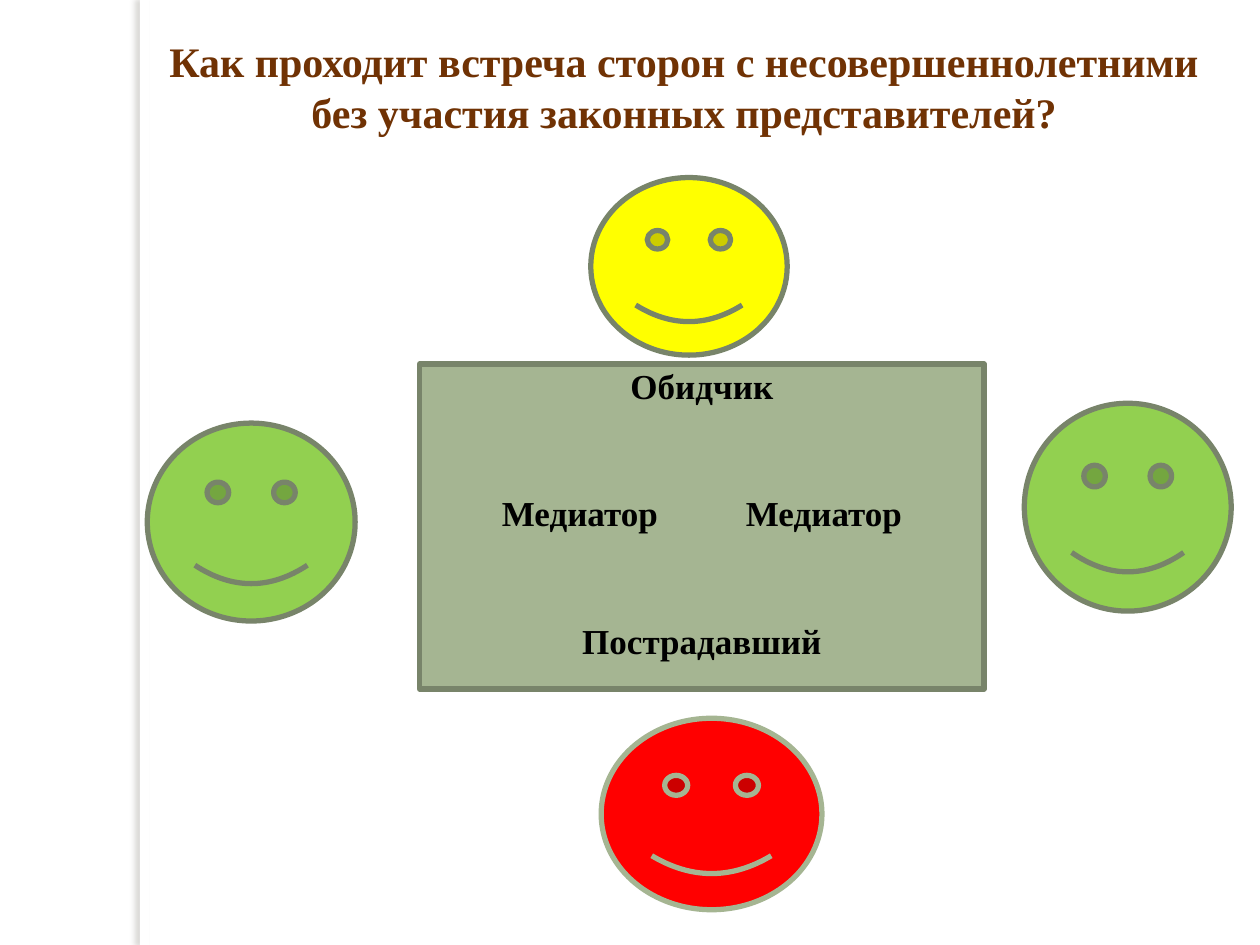
import pptx
import pptx.dml.color
import pptx.enum.shapes
import pptx.enum.text
import pptx.oxml
import pptx.oxml.ns
import pptx.util

Cm = pptx.util.Cm
Pt = pptx.util.Pt
RGBColor = pptx.dml.color.RGBColor
Shapes = pptx.enum.shapes.MSO_SHAPE
Align = pptx.enum.text.PP_ALIGN
Anchor = pptx.enum.text.MSO_ANCHOR

FONT = "Times New Roman"
WHITE = RGBColor(0xFF, 0xFF, 0xFF)
BLACK = RGBColor(0, 0, 0)
BROWN = RGBColor(0x70, 0x32, 0x04)
SAGE = RGBColor(0xA5, 0xB5, 0x92)
DARK_SAGE = RGBColor(0x78, 0x84, 0x6A)
GREEN = RGBColor(0x92, 0xD0, 0x50)
YELLOW = RGBColor(0xFF, 0xFF, 0)
RED = RGBColor(0xFF, 0, 0)

TITLE = ("Как проходит встреча сторон с несовершеннолетними "
         "без участия законных представителей?")
SEATS = ["Обидчик", "\tМедиатор\tМедиатор", "Пострадавший"]

# Boxes are left, top, width, height in centimetres
EDGE_BOX = (2.82, 0, 0.2, 19.05)
TITLE_BOX = (2.97, 0.58, 21.64, 2.31)
TABLE_BOX = (8.46, 7.34, 11.38, 6.55)
FACES = [
    ((2.97, 8.53, 4.19, 3.99), GREEN, DARK_SAGE),
    ((20.65, 8.13, 4.17, 4.19), GREEN, DARK_SAGE),
    ((11.91, 3.58, 3.96, 3.58), YELLOW, DARK_SAGE),
    ((12.12, 14.48, 4.45, 3.86), RED, SAGE),
]


def add_filled_shape(slide, kind, box, fill, line=None):
    shape = slide.shapes.add_shape(kind, *map(Cm, box))
    shape.shadow.inherit = False
    shape.fill.solid()
    shape.fill.fore_color.rgb = fill
    if line is None:
        shape.line.fill.background()
    else:
        shape.line.color.rgb = line
        shape.line.width = Pt(3)
    return shape


def format_paragraph(paragraph, size, color):
    paragraph.alignment = Align.CENTER
    paragraph.font.name = FONT
    paragraph.font.size = Pt(size)
    paragraph.font.bold = True
    paragraph.font.color.rgb = color


def add_center_tabs(paragraph, positions):
    """Make the paragraph left-aligned with centred tab stops."""
    paragraph.alignment = Align.LEFT
    stops = "".join(f'<a:tab pos="{Cm(position)}" algn="ctr"/>' for position in positions)
    tabs = pptx.oxml.parse_xml(
        f'<a:tabLst {pptx.oxml.ns.nsdecls("a")}>{stops}</a:tabLst>')
    properties = paragraph._p.get_or_add_pPr()
    properties.find(pptx.oxml.ns.qn("a:defRPr")).addprevious(tabs)


def add_edge(slide, box):
    edge = add_filled_shape(slide, Shapes.RECTANGLE, box, WHITE)
    # Soft shadow falling to the left
    effects = edge._element.spPr.find(pptx.oxml.ns.qn("a:effectLst"))
    effects.append(pptx.oxml.parse_xml(
        f'<a:outerShdw {pptx.oxml.ns.nsdecls("a")} blurRad="{Pt(3)}" dist="{Pt(3)}" '
        'dir="10800000" algn="tl" rotWithShape="0">'
        '<a:srgbClr val="736F63"><a:alpha val="25000"/></a:srgbClr></a:outerShdw>'))


def add_title(slide, box):
    title = slide.shapes.title
    title.left, title.top, title.width, title.height = map(Cm, box)
    frame = title.text_frame
    frame.text = TITLE
    frame.word_wrap = True
    frame.auto_size = pptx.enum.text.MSO_AUTO_SIZE.NONE
    frame.vertical_anchor = Anchor.TOP
    paragraph = frame.paragraphs[0]
    format_paragraph(paragraph, 24, BROWN)
    paragraph.line_spacing = Pt(29)


def add_table_with_seats(slide, box):
    table = add_filled_shape(slide, Shapes.RECTANGLE, box, SAGE, DARK_SAGE)
    frame = table.text_frame
    frame.word_wrap = True
    frame.vertical_anchor = Anchor.TOP
    frame.margin_left = frame.margin_right = frame.margin_top = 0
    frame.text = "\n".join(SEATS)
    for index, paragraph in enumerate(frame.paragraphs):
        format_paragraph(paragraph, 20, BLACK)
        paragraph.space_before = Pt(49 if index else 0)
    # The two mediators sit symmetrically about the middle
    middle, offset = box[2] / 2, 2.46
    add_center_tabs(frame.paragraphs[1], (middle - offset, middle + offset))


def add_faces(slide):
    for box, fill, line in FACES:
        add_filled_shape(slide, Shapes.SMILEY_FACE, box, fill, line)


def main():
    presentation = pptx.Presentation()
    presentation.slide_width = Cm(25.4)
    presentation.slide_height = Cm(19.05)
    slide = presentation.slides.add_slide(presentation.slide_layouts[5])
    add_edge(slide, EDGE_BOX)
    add_title(slide, TITLE_BOX)
    add_faces(slide)
    add_table_with_seats(slide, TABLE_BOX)
    presentation.save("out.pptx")


if __name__ == "__main__":
    main()
